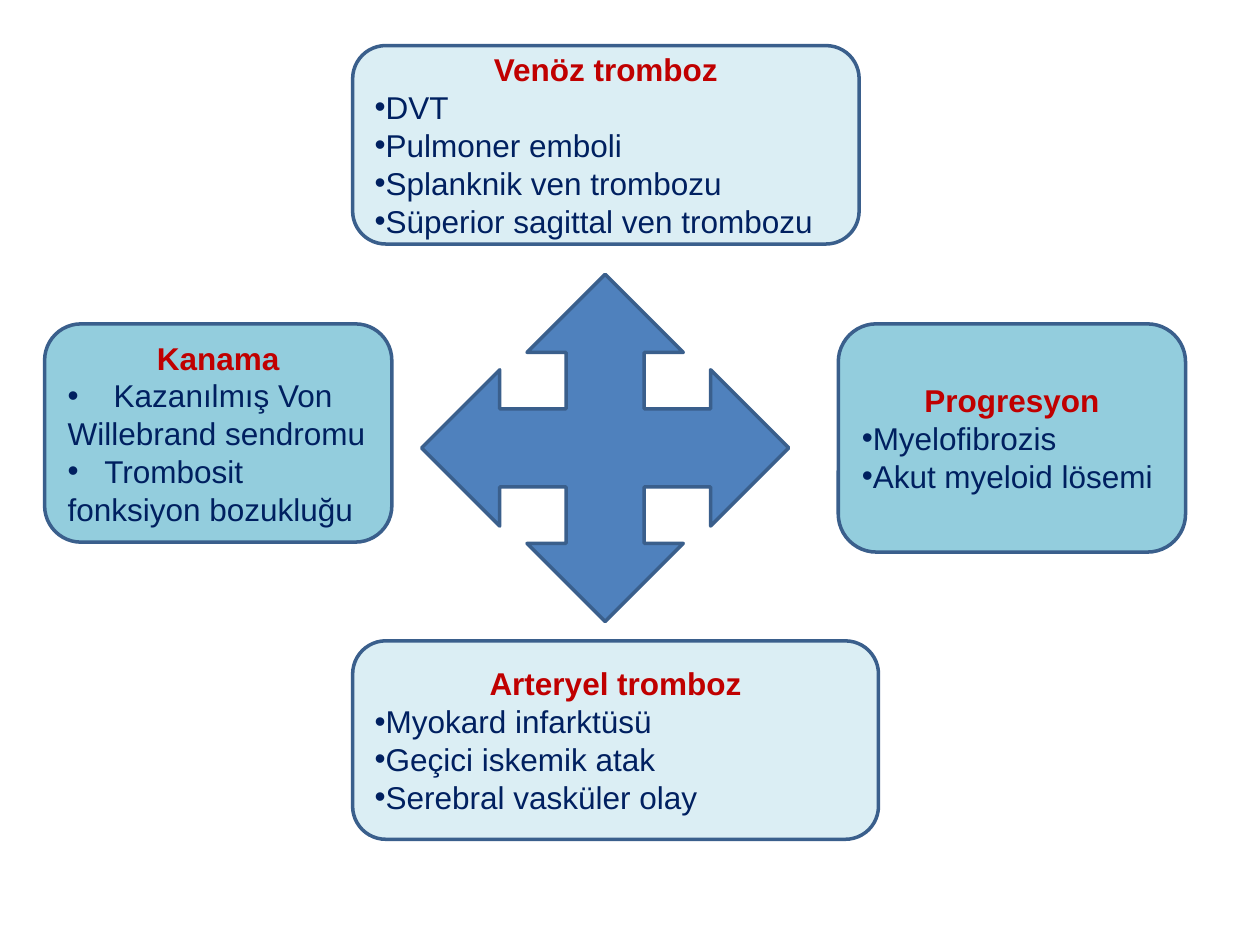
from pptx import Presentation
from pptx.dml.color import RGBColor as Rgb
from pptx.enum.shapes import MSO_SHAPE as Geo
from pptx.enum.text import MSO_ANCHOR as Anchor, PP_ALIGN as Align
from pptx.oxml.ns import qn
from pptx.util import Cm, Pt
from lxml.etree import SubElement as Sub

INK = {"arrow": "4F81BD", "edge": "3A5F8C", "pale": "DBEEF4",
       "teal": "93CDDD", "head": "C00000", "body": "002060"}

ARROW = (8.5, 5.53, 7.4, 7)
BOXES = [
    ("Venöz tromboz", "pale", (7.11, 0.92, 10.21, 4),
     [("DVT", 0), ("Pulmoner emboli", 0), ("Splanknik ven trombozu", 0),
      ("Süperior sagittal ven trombozu", 0)]),
    ("Arteryel tromboz", "pale", (7.11, 12.92, 10.6, 4),
     [("Myokard infarktüsü", 0), ("Geçici iskemik atak", 0),
      ("Serebral vasküler olay", 0)]),
    ("Progresyon", "teal", (16.9, 6.53, 7, 4.6),
     [("Myelofibrozis", 0), ("Akut myeloid lösemi", 0)]),
    ("Kanama", "teal", (0.9, 6.53, 7, 4.4),
     [("Kazanılmış Von Willebrand sendromu", 0.93),
      ("Trombosit fonksiyon bozukluğu", 0.74)]),
]


def color(name):
    return Rgb.from_string(INK[name])


def draw(slide, kind, place, fill):
    shape = slide.shapes.add_shape(kind, *map(Cm, place))
    shape.shadow.inherit = False
    shape.fill.solid()
    shape.fill.fore_color.rgb = color(fill)
    shape.line.color.rgb = color("edge")
    shape.line.width = Pt(2)
    return shape


def style(para, ink, bold, align):
    para.alignment = align
    font = para.font
    font.name, font.size, font.bold = "Arial", Pt(18), bold
    font.color.rgb = color(ink)


def bullet(para, stop):
    props = para._p.get_or_add_pPr()
    Sub(props, qn("a:buFont"), typeface="Arial")
    Sub(props, qn("a:buChar"), char="•")
    if stop:
        tabs = Sub(props, qn("a:tabLst"))
        Sub(tabs, qn("a:tab"), pos=str(Cm(stop)), algn="l")


def panel(slide, title, fill, place, items):
    frame = draw(slide, Geo.ROUNDED_RECTANGLE, place, fill).text_frame
    frame.word_wrap = True
    frame.vertical_anchor = Anchor.MIDDLE
    head = frame.paragraphs[0]
    head.text = title
    style(head, "head", True, Align.CENTER)
    for text, stop in items:
        para = frame.add_paragraph()
        para.text = "\t" + text if stop else text
        bullet(para, stop)
        style(para, "body", False, Align.LEFT)


def main():
    deck = Presentation()
    deck.slide_width, deck.slide_height = Cm(25.4), Cm(19.05)
    slide = deck.slides.add_slide(deck.slide_layouts[6])
    draw(slide, Geo.QUAD_ARROW, ARROW, "arrow")
    for box in BOXES:
        panel(slide, *box)
    deck.save("out.pptx")


if __name__ == "__main__":
    main()
